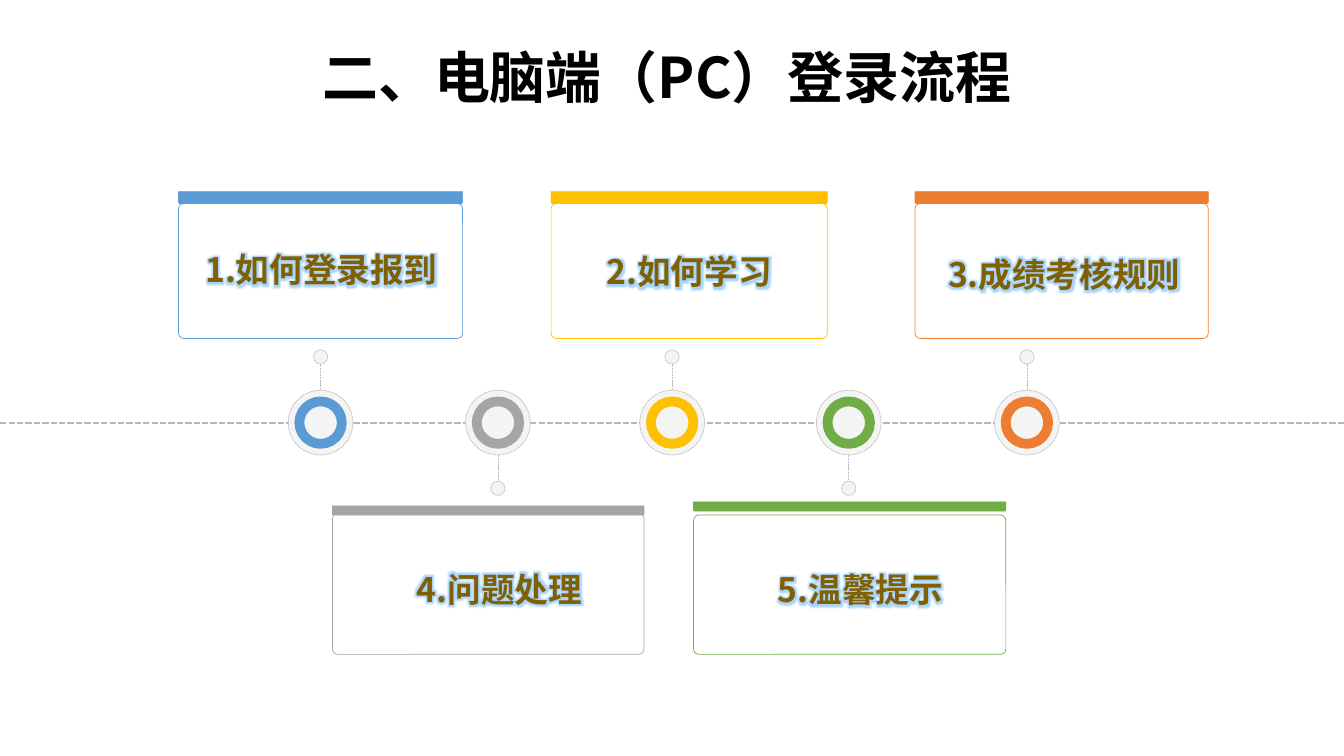
import pptx
import pptx.util
import pptx.dml.color
import pptx.enum.dml
import pptx.enum.shapes
import pptx.enum.text
import pptx.oxml
import pptx.oxml.ns
from pptx.util import Cm

# Content
TITLE = "二、电脑端（PC）登录流程"
FONT = "Noto Sans CJK SC"
COLORS = {
    "blue": "5B9BD5", "gray": "A5A5A5", "yellow": "FFC000", "green": "70AD47",
    "orange": "ED7D31", "axis": "ADB9CA", "outline": "BFBFBF", "pale": "F4F4F4",
    "label": "806000", "title": "000000", "glow": "50AAFF",
}
# Colour, centre x, side of the axis (-1 above, 1 below)
NODES = [
    ("blue", 8.08, -1), ("gray", 12.55, 1), ("yellow", 16.94, -1),
    ("green", 21.39, 1), ("orange", 25.88, -1),
]
# Text, colour, left, width, (bar top, bar height), (body top, body height),
# (label left, label top, label width)
CARDS = [
    ("1.如何登录报到", "blue", 4.5, 7.16, (4.83, 0.3), (5.13, 3.4), (4.57, 6.15, 7.06)),
    ("2.如何学习", "yellow", 13.89, 6.96, (4.83, 0.3), (5.13, 3.4), (13.94, 6.2, 6.86)),
    ("3.成绩考核规则", "orange", 23.06, 7.39, (4.83, 0.3), (5.13, 3.4), (23.19, 6.27, 7.26)),
    ("4.问题处理", "gray", 8.38, 7.85, (12.75, 0.23), (12.93, 3.56), (8.43, 14.2, 8.31)),
    ("5.温馨提示", "green", 17.48, 7.87, (12.65, 0.23), (12.98, 3.51), (17.48, 14.22, 8.41)),
]
PAGE_WIDTH, PAGE_HEIGHT = 33.87, 19.05
AXIS_Y = 10.65
DISC, RING, DOT, STEM = 1.63, 1.07, 0.36, 0.66

SHAPES = pptx.enum.shapes.MSO_SHAPE
DASH = pptx.enum.dml.MSO_LINE.SQUARE_DOT


def rgb(name):
    return pptx.dml.color.RGBColor.from_string(COLORS[name])


def set_line(line, color, width, dashed):
    line.color.rgb = rgb(color)
    line.width = pptx.util.Pt(width)
    if dashed:
        line.dash_style = DASH


def add_shape(page, kind, left, top, width, height, fill, color, weight=0.5, dashed=False):
    shape = page.shapes.add_shape(kind, Cm(left), Cm(top), Cm(width), Cm(height))
    shape.shadow.inherit = False
    if fill:
        shape.fill.solid()
        shape.fill.fore_color.rgb = rgb(fill)
    else:
        shape.fill.background()
    set_line(shape.line, color, weight, dashed)
    return shape


def add_circle(page, x, y, size, color="outline", weight=0.5, dashed=True):
    add_shape(page, SHAPES.OVAL, x - size / 2, y - size / 2, size, size,
              "pale", color, weight, dashed)


def add_line(page, start, end, color, weight):
    line = page.shapes.add_connector(
        pptx.enum.shapes.MSO_CONNECTOR.STRAIGHT, *map(Cm, start + end))
    set_line(line.line, color, weight, True)
    line._element.spPr.append(pptx.oxml.parse_xml(
        f'<a:effectLst {pptx.oxml.ns.nsdecls("a")}/>'))


def write(box, place, text, size, color, glow=False):
    for name, value in zip(("left", "top", "width", "height"), place):
        setattr(box, name, Cm(value))
    frame = box.text_frame
    frame_format = {
        "word_wrap": True,
        "auto_size": pptx.enum.text.MSO_AUTO_SIZE.NONE,
        "vertical_anchor": pptx.enum.text.MSO_ANCHOR.TOP,
    }
    for name, value in frame_format.items():
        setattr(frame, name, value)
    para = frame.paragraphs[0]
    para.alignment = pptx.enum.text.PP_ALIGN.CENTER
    span = para.add_run()
    span.text = text
    for name, value in {"size": pptx.util.Pt(size), "bold": True, "name": FONT}.items():
        setattr(span.font, name, value)
    span.font.color.rgb = rgb(color)
    # East Asian typeface, and the glow, which belongs before the typefaces
    namespace = pptx.oxml.ns.nsdecls("a")
    latin = span._r.rPr.find(pptx.oxml.ns.qn("a:latin"))
    latin.addnext(pptx.oxml.parse_xml(f'<a:ea {namespace} typeface="{FONT}"/>'))
    if glow:
        latin.addprevious(pptx.oxml.parse_xml(
            f'<a:effectLst {namespace}><a:glow rad="101600">'
            f'<a:srgbClr val="{COLORS["glow"]}"><a:alpha val="50000"/></a:srgbClr>'
            '</a:glow></a:effectLst>'))


def main():
    deck = pptx.Presentation()
    deck.slide_width, deck.slide_height = Cm(PAGE_WIDTH), Cm(PAGE_HEIGHT)
    page = deck.slides.add_slide(deck.slide_layouts[5])

    # Title
    write(page.shapes.title, (7.8, 0.94, 18.01, 2.82), TITLE, 40, "title")

    # Timeline: axis, then each node with its stem and end dot
    add_line(page, (PAGE_WIDTH, AXIS_Y), (0, AXIS_Y), "axis", 1.5)
    for color, x, side in NODES:
        stem_start = AXIS_Y + side * DISC / 2
        stem_end = stem_start + side * STEM
        add_line(page, (x, stem_start), (x, stem_end), "outline", 0.5)
        add_circle(page, x, stem_end + side * DOT / 2, DOT)
        add_circle(page, x, AXIS_Y, DISC)
        add_circle(page, x, AXIS_Y, RING, color, 7, False)

    # Cards: outlined body, coloured bar and label
    for text, color, left, width, bar, body, label in CARDS:
        panel = add_shape(page, SHAPES.ROUNDED_RECTANGLE, left, body[0], width, body[1],
                          None, color)
        panel.adjustments[0] = 0.038
        strip = add_shape(page, SHAPES.ROUND_2_SAME_RECTANGLE, left, bar[0], width, bar[1],
                          color, color)
        strip.adjustments[0], strip.adjustments[1] = 0, 0.125
        box = page.shapes.add_textbox(0, 0, 0, 0)
        write(box, (*label, 1.27), text, 24, "label", glow=True)

    deck.save("out.pptx")


if __name__ == "__main__":
    main()
